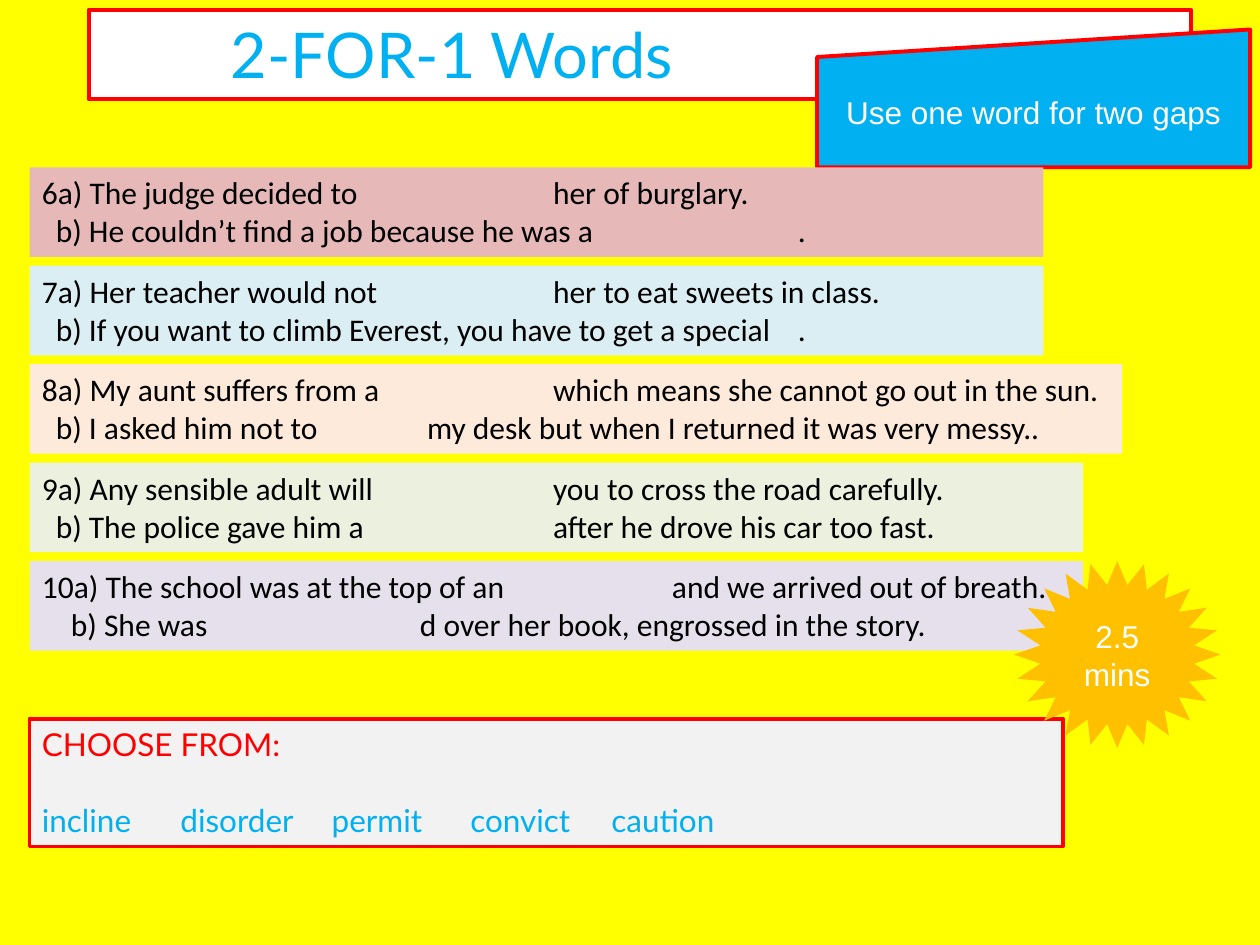
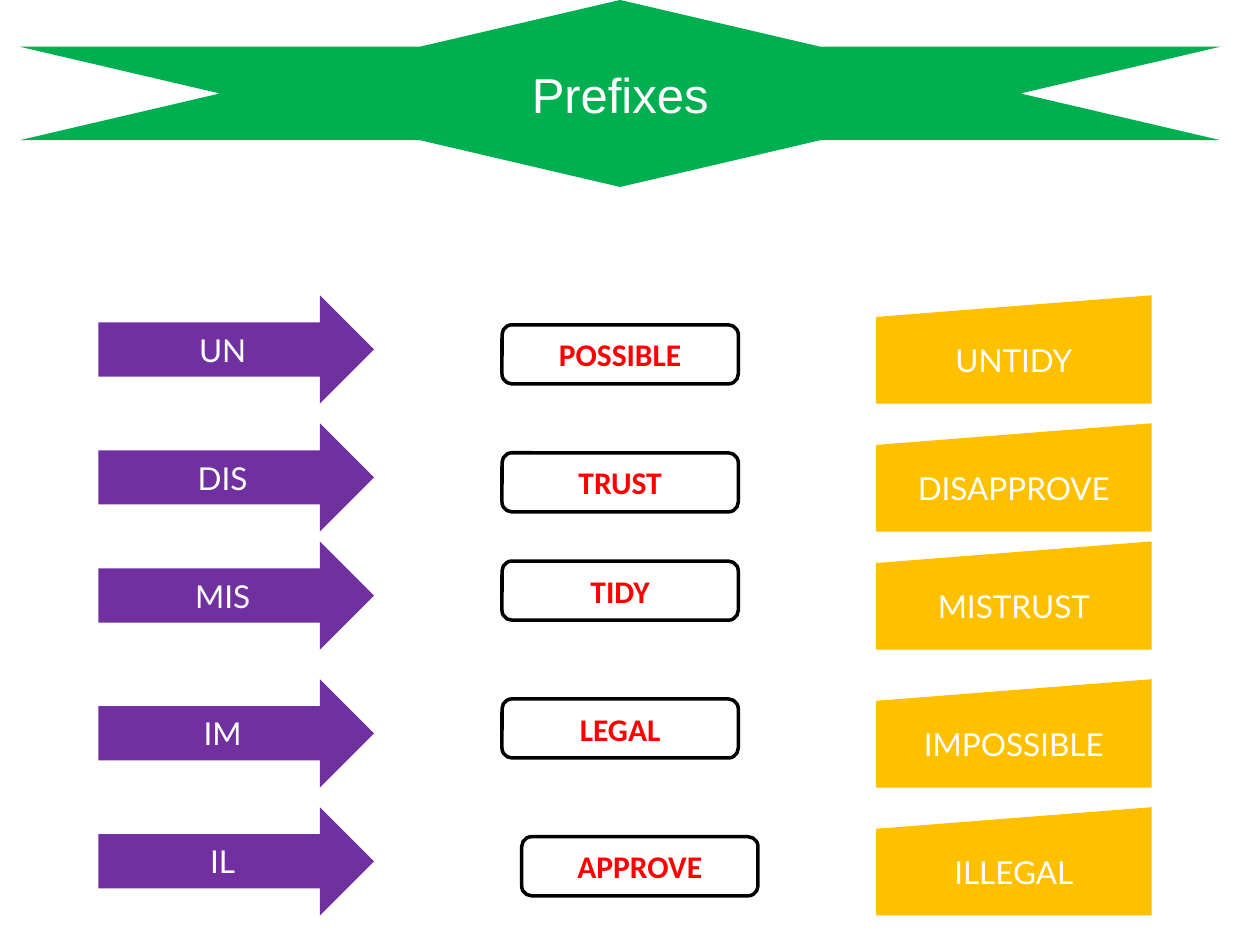
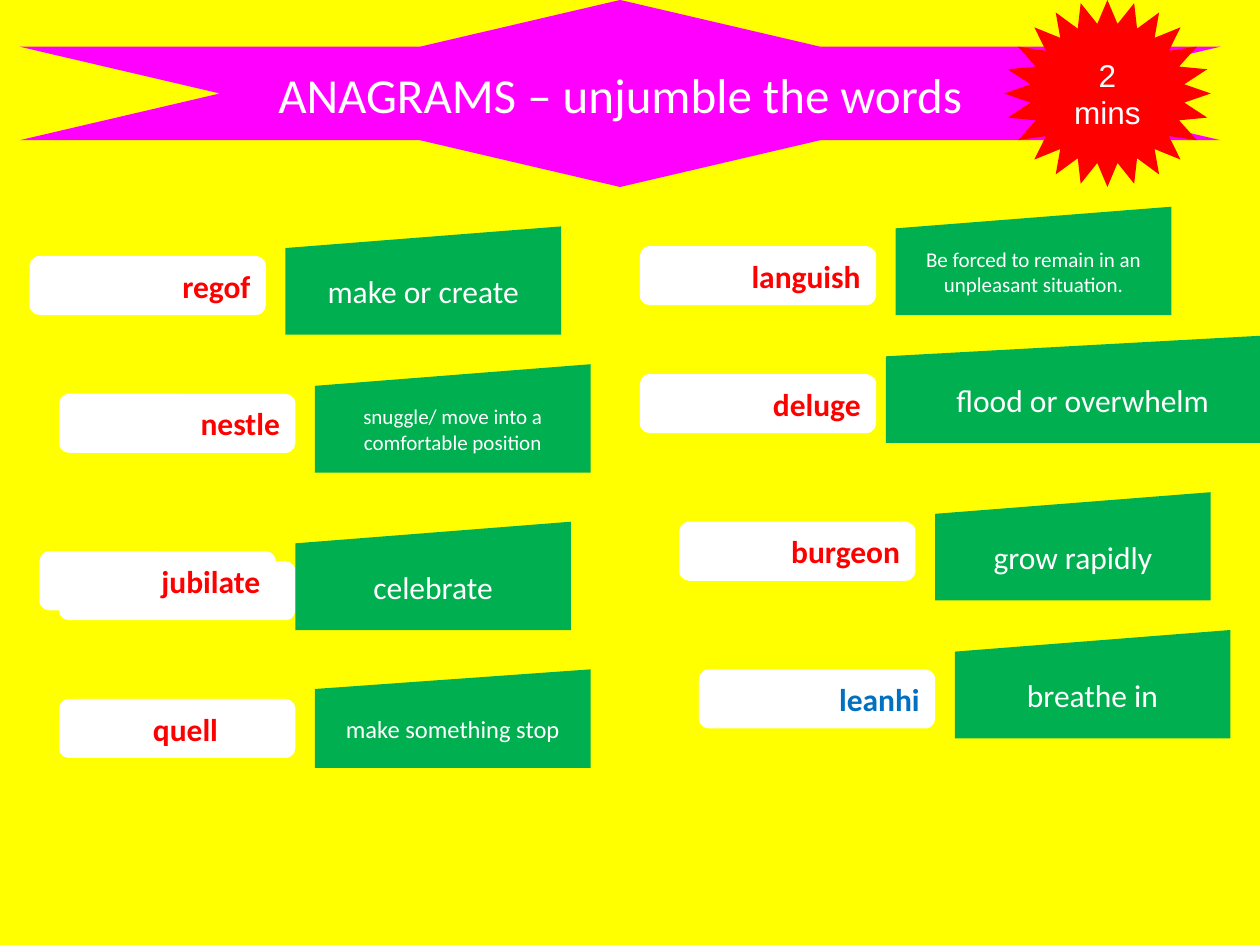
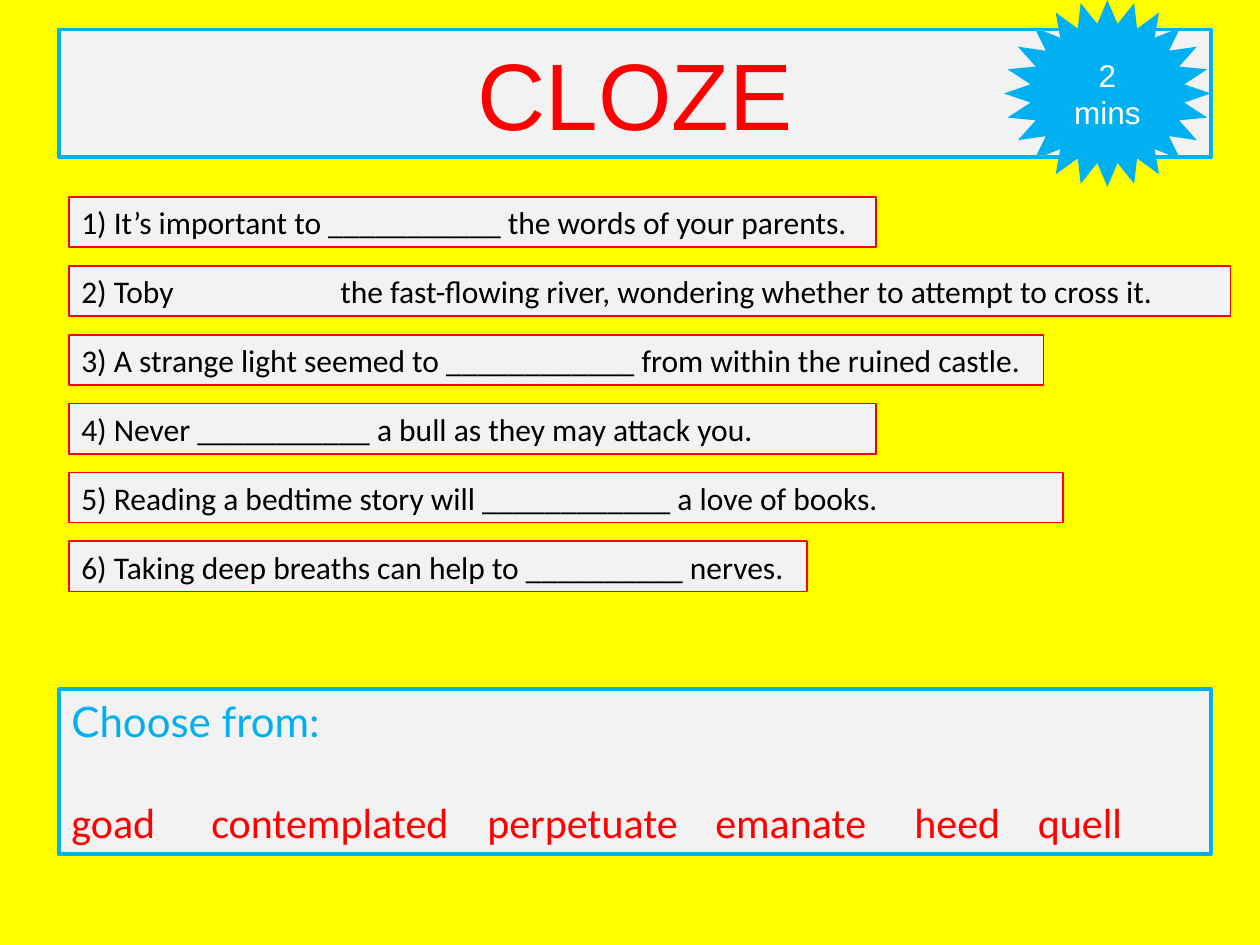
from lxml import etree
from pptx import Presentation
from pptx.dml.color import RGBColor
from pptx.enum.shapes import MSO_SHAPE
from pptx.enum.text import MSO_ANCHOR, PP_ALIGN
from pptx.oxml.ns import qn
from pptx.util import Inches, Pt

RECT, ROUNDED = MSO_SHAPE.RECTANGLE, MSO_SHAPE.ROUNDED_RECTANGLE
SLANTED, ARROW = MSO_SHAPE.FLOWCHART_MANUAL_INPUT, MSO_SHAPE.RIGHT_ARROW
RIBBON, BURST = MSO_SHAPE.STAR_6_POINT, MSO_SHAPE.STAR_24_POINT
TOP, MIDDLE = MSO_ANCHOR.TOP, MSO_ANCHOR.MIDDLE
LEFT, CENTER, RIGHT = PP_ALIGN.LEFT, PP_ALIGN.CENTER, PP_ALIGN.RIGHT

COLORS = {
    "yellow": "FFFF00", "white": "FFFFFF", "black": "000000", "red": "FF0000",
    "sky": "00B0F0", "blue": "0070C0", "green": "00B050", "purple": "7030A0",
    "gold": "FFC000", "magenta": "FF00FF", "grey": "F2F2F2", "rose": "E6B9B8",
    "aqua": "DBEEF4", "peach": "FDEADA", "lime": "EBF1DE", "lilac": "E6E0EC",
}
ARIAL = {"name": "Arial", "size": Pt(18)}
CALIBRI = {"name": "Calibri", "size": Pt(18)}
LATO = {"name": "Lato", "size": Pt(18)}
BOLD = {**CALIBRI, "bold": True}

deck = Presentation()
deck.slide_width, deck.slide_height = Inches(10), Inches(7.5)
UNIT = deck.slide_width / 128  # square grid of 128 columns and 96 rows

# Shared sizes and places, in grid units
WORD_SIZE = (24, 6)
PANEL_SIZE = (28, 11)
BURST_SIZE = (21, 19)
RIBBON_PLACE = (2, 0, 122, 19)
TIMER_PLACE = (102, 0, *BURST_SIZE)


def add_box(page, kind, place, fill, outline=None, weight=2.25, anchor=MIDDLE):
    box = page.shapes.add_shape(kind, *(round(value * UNIT) for value in place))
    box.shadow.inherit = False
    box.fill.solid()
    box.fill.fore_color.rgb = RGBColor.from_string(COLORS[fill])
    if outline:
        box.line.color.rgb = RGBColor.from_string(COLORS[outline])
        box.line.width = Pt(weight)
    else:
        box.line.fill.background()
    box.text_frame.word_wrap = True
    box.text_frame.vertical_anchor = anchor
    return box


def write(box, text, look, color="white", align=CENTER, stops=(), gap=None, indent=0):
    frame = box.text_frame
    para = frame.add_paragraph() if frame.text else frame.paragraphs[0]
    para.alignment = align
    if gap:
        para.space_before = Pt(gap)
    properties = para._p.get_or_add_pPr()
    if indent:
        properties.set("marL", str(Inches(indent)))
    if stops:
        tab_list = etree.SubElement(properties, qn("a:tabLst"))
        for stop in stops:
            etree.SubElement(tab_list, qn("a:tab"), pos=str(Inches(stop)), algn="l")
    span = para.add_run()
    span.text = text
    for attribute, value in look.items():
        setattr(span.font, attribute, value)
    span.font.color.rgb = RGBColor.from_string(COLORS[color])


pages = []
for background in ("yellow", "white", "yellow", "yellow"):
    page = deck.slides.add_slide(deck.slide_layouts[6])
    page.background.fill.solid()
    page.background.fill.fore_color.rgb = RGBColor.from_string(COLORS[background])
    pages.append(page)
words_page, prefix_page, anagram_page, cloze_page = pages

# Slide 1: heading and instruction
heading = add_box(words_page, RECT, (9, 1, 112, 9.1), "white", "red", anchor=TOP)
write(heading, "2-FOR-1 Words", {**LATO, "size": Pt(36)}, "sky", LEFT, indent=1.03)
callout = add_box(words_page, SLANTED, (83, 3, 44, 14), "sky", "red")
write(callout, "Use one word for two gaps", ARIAL)

# Slide 1: sentence pairs, each line with its tab stops in inches
PAIRS = [
    ("rose", 103, ("6a) The judge decided to\t her of burglary.", [4]),
     ("\tb) He couldn’t find a job because he was a\t.", [0.11, 6])),
    ("aqua", 103, ("7a) Her teacher would not\t her to eat sweets in class.", [4]),
     ("\tb) If you want to climb Everest, you have to get a special\t.", [0.11, 6])),
    ("peach", 111, ("8a) My aunt suffers from a\t which means she cannot go out in the sun.", [4]),
     ("\tb) I asked him not to\t my desk but when I returned it was very messy..", [0.11, 3])),
    ("lime", 107, ("9a) Any sensible adult will\t you to cross the road carefully.", [4]),
     ("\tb) The police gave him a\t after he drove his car too fast.", [0.11, 4])),
    ("lilac", 107, ("10a) The school was at the top of an\tand we arrived out of breath.", [5]),
     ("\tb) She was\td over her book, engrossed in the story.", [0.23, 3])),
]
for row, (fill, width, *lines) in enumerate(PAIRS):
    pair_box = add_box(words_page, RECT, (3, 17 + 10 * row, width, 9.1), fill, anchor=TOP)
    for text, stops in lines:
        write(pair_box, text, CALIBRI, "black", LEFT, stops)

# Slide 1: word bank and timer
bank = add_box(words_page, RECT, (3, 73, 105, 13), "grey", "red", anchor=TOP)
write(bank, "CHOOSE FROM:", LATO, "red", LEFT)
write(bank, "incline\tdisorder\tpermit\tconvict\tcaution", LATO, "sky", LEFT,
      [1.1, 2.3, 3.4, 4.52], gap=22)
timer = add_box(words_page, BURST, (103, 57, *BURST_SIZE), "gold")
write(timer, "2.5 mins", ARIAL)

# Slide 2: ribbon, then prefix, root and answer in each row
ribbon = add_box(prefix_page, RIBBON, RIBBON_PLACE, "green")
write(ribbon, "Prefixes", {**ARIAL, "size": Pt(28)})
PREFIX_ROWS = [
    (30, "UN", 51, 33, "POSSIBLE", "UNTIDY"),
    (43, "DIS", 51, 46, "TRUST", "DISAPPROVE"),
    (55, "MIS", 51, 57, "TIDY", "MISTRUST"),
    (69, "IM", 51, 71, "LEGAL", "IMPOSSIBLE"),
    (82, "IL", 53, 85, "APPROVE", "ILLEGAL"),
]
for top, prefix, root_left, root_top, root, answer in PREFIX_ROWS:
    arrow = add_box(prefix_page, ARROW, (10, top, *PANEL_SIZE), "purple")
    write(arrow, prefix, LATO)
    root_box = add_box(prefix_page, ROUNDED, (root_left, root_top, *WORD_SIZE),
                       "white", "black", 2)
    write(root_box, root, BOLD, "red")
    panel = add_box(prefix_page, SLANTED, (89, top, *PANEL_SIZE), "gold")
    write(panel, answer, LATO)

# Slide 3: ribbon and the empty card under "jubilate"
ribbon = add_box(anagram_page, RIBBON, RIBBON_PLACE, "magenta")
write(ribbon, "ANAGRAMS – unjumble the words", {**CALIBRI, "size": Pt(28)})
add_box(anagram_page, ROUNDED, (6, 57, *WORD_SIZE), "white")

# Slide 3: words, each with its clue
ANAGRAMS = [
    ("regof", "red", (3, 26), "make or create", 18, (29, 23, *PANEL_SIZE)),
    ("nestle", "red", (6, 40), "snuggle/ move into a comfortable position", 12,
     (32, 37, *PANEL_SIZE)),
    ("jubilate", "red", (4, 56), "celebrate", 18, (30, 53, *PANEL_SIZE)),
    ("quell", "red", (6, 71), "make something stop", 14, (32, 68, 28, 10)),
    ("languish", "red", (65, 25), "Be forced to remain in an unpleasant situation.", 12,
     (91, 21, *PANEL_SIZE)),
    ("deluge", "red", (65, 38), "flood or overwhelm", 18, (90, 34, 40, 11)),
    ("burgeon", "red", (69, 53), "grow rapidly", 18, (95, 50, *PANEL_SIZE)),
    ("leanhi", "blue", (71, 68), "breathe in", 18, (97, 64, *PANEL_SIZE)),
]
for word, color, corner, clue, size, clue_place in ANAGRAMS:
    card = add_box(anagram_page, ROUNDED, (*corner, *WORD_SIZE), "white")
    write(card, word, BOLD, color, RIGHT)
    if word == "quell":
        card.text_frame.margin_right = Inches(0.59)
    panel = add_box(anagram_page, SLANTED, clue_place, "green")
    write(panel, clue, {**CALIBRI, "size": Pt(size)})

# Slide 4: heading and sentences
heading = add_box(cloze_page, RECT, (6, 3, 117, 13), "grey", "sky", anchor=TOP)
write(heading, "CLOZE", {**ARIAL, "size": Pt(54)}, "red")
SENTENCES = [
    (82, "1) It’s important to ___________ the words of your parents."),
    (118, "2) Toby\t the fast-flowing river, wondering whether to attempt to cross it."),
    (99, "3) A strange light seemed to ____________ from within the ruined castle."),
    (82, "4) Never ___________ a bull as they may attack you."),
    (101, "5) Reading a bedtime story will ____________ a love of books."),
    (75, "6) Taking deep breaths can help to __________ nerves."),
]
for row, (width, sentence) in enumerate(SENTENCES):
    sentence_box = add_box(cloze_page, RECT, (7, 20 + 7 * row, width, 5.1),
                           "grey", "red", 1, TOP)
    write(sentence_box, sentence, CALIBRI, "black", LEFT, [2])

# Slide 4: word bank
bank = add_box(cloze_page, RECT, (6, 70, 117, 16.8), "grey", "sky", anchor=TOP)
write(bank, "Choose from:", {**LATO, "size": Pt(24)}, "sky", LEFT)
write(bank, "goad\tcontemplated\tperpetuate\temanate\theed\tquell",
      {**CALIBRI, "size": Pt(24)}, "red", LEFT, [1.11, 3.3, 5.11, 6.69, 7.67], gap=29)

# Timers of slides 3 and 4
for page, fill in ((anagram_page, "red"), (cloze_page, "sky")):
    timer = add_box(page, BURST, TIMER_PLACE, fill)
    write(timer, "2 mins", ARIAL)

deck.save("out.pptx")
